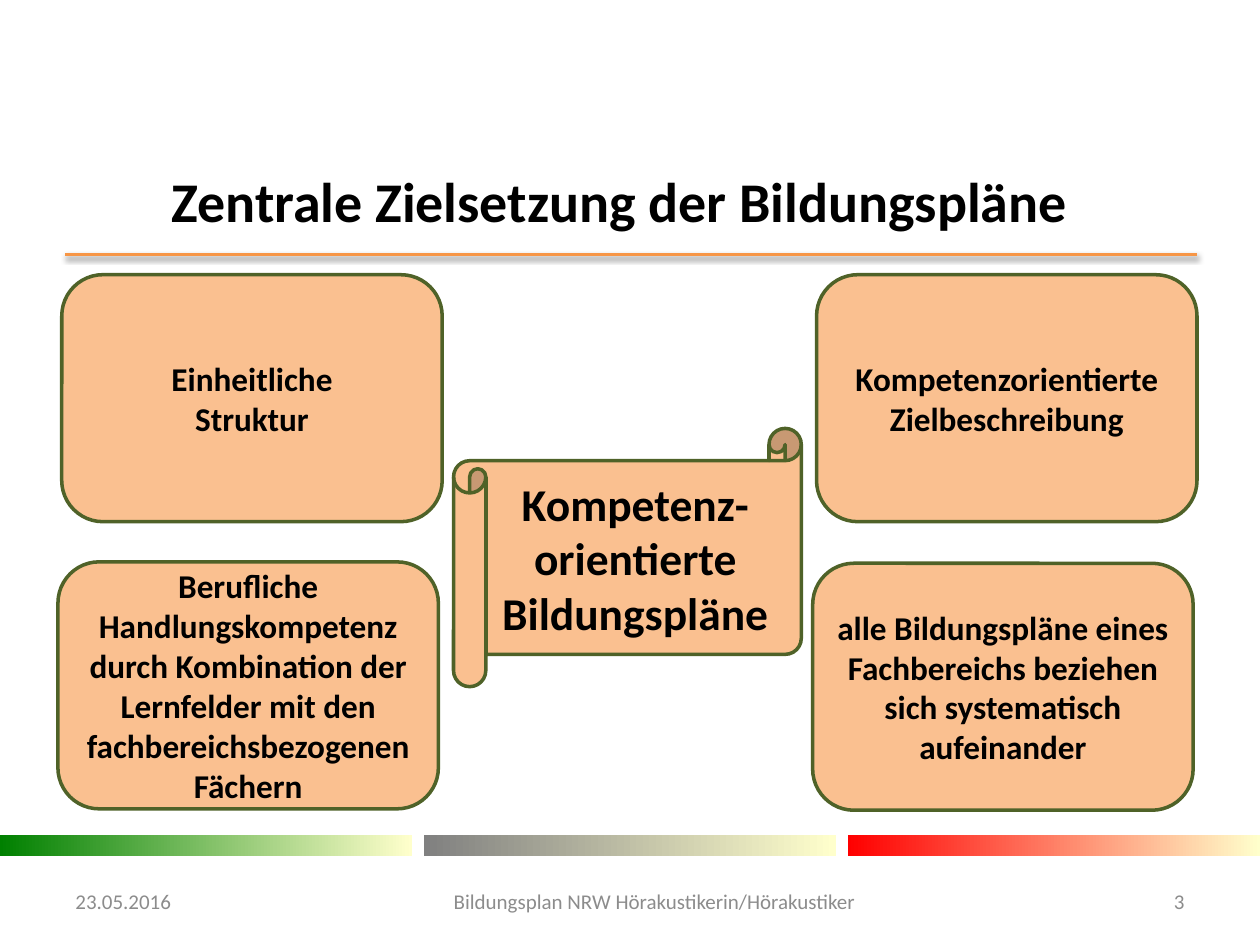
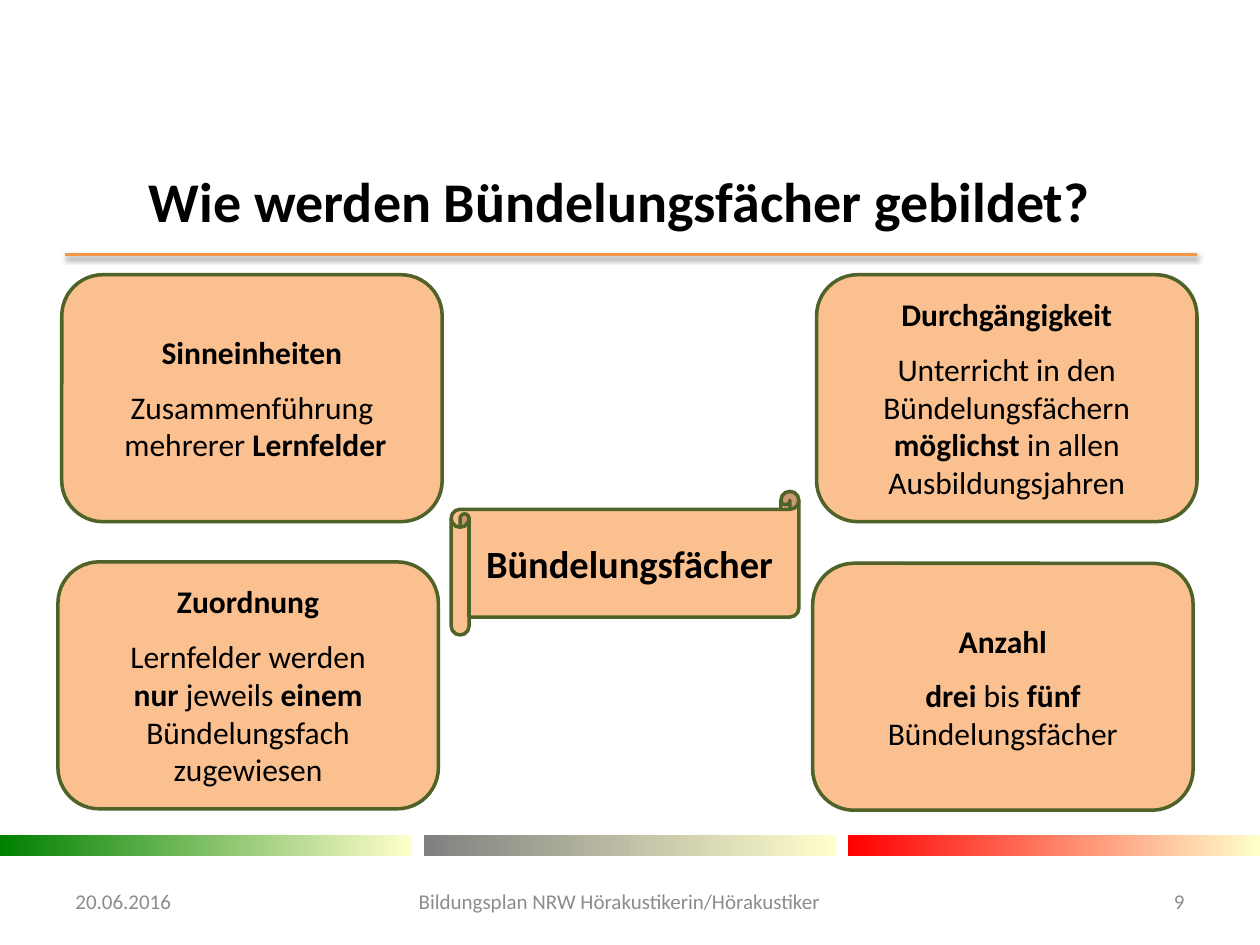
from lxml import etree
from pptx import Presentation
from pptx import util as u
from pptx.dml import color
from pptx.enum import shapes, text
from pptx.oxml import ns

Pt = u.Pt
MID = text.PP_ALIGN.CENTER
KIND = shapes.MSO_SHAPE
FONT = "Calibri"
INK, GREY, EDGE, PEACH, RULE, PALE = "000000", "8C8C8C", "4F6228", "FAC090", "F79646", "FFFFCC"
BANDS = ("008000", "808080", "FF0000")

GRID = (35.3, 157, 648.7, 306)
CARD = (217.4, 141.1)
FOOT = (36, 500.4, 648, 28.8)

SLIDES = [
    {
        "title": "Zentrale Zielsetzung der Bildungspläne",
        "hub": ("Kompetenz-orientierte Bildungspläne", (259.2, 244.8, 198.7, 147.6), 26),
        "size": 19,
        "gap": 0,
        "cards": [
            ["*Einheitliche*", "*Struktur*"],
            ["*Berufliche Handlungskompetenz durch Kombination der Lernfelder "
             "mit den fachbereichsbezogenen Fächern*"],
            ["*alle Bildungspläne eines Fachbereichs beziehen sich systematisch aufeinander*"],
            ["*Kompetenzorientierte Zielbeschreibung*"],
        ],
        "foot": ("23.05.2016", "3", 131, 414),
    },
    {
        "title": "Wie werden Bündelungsfächer gebildet?",
        "hub": ("Bündelungsfächer", (257.8, 280.8, 198.7, 82.1), 22),
        "size": 18,
        "gap": 9.6,
        "cards": [
            ["*Sinneinheiten*", "Zusammenführung", " mehrerer *Lernfelder*"],
            ["*Zuordnung*", "Lernfelder werden",
             "*nur *jeweils *einem *Bündelungsfach", "zugewiesen"],
            ["*Anzahl*", "*drei *bis* fünf *Bündelungsfächer"],
            ["*Durchgängigkeit*", "Unterricht in den Bündelungsfächern *möglichst* "
             "in allen Ausbildungsjahren"],
        ],
        "foot": ("20.06.2016", "9", 80, 475.9),
    },
]


def rgb(code):
    return color.RGBColor.from_string(code)


def put(item, **form):
    for name, value in form.items():
        setattr(item, name, value)


def place(box):
    return [Pt(part) for part in box]


def write(shape, lines, size, ink=INK, align=MID, gap=0, side=7.2):
    frame = shape.text_frame
    put(frame, word_wrap=True, vertical_anchor=text.MSO_ANCHOR.MIDDLE,
        margin_left=Pt(side), margin_right=Pt(side))
    for row, line in enumerate(lines):
        para = frame.add_paragraph() if row else frame.paragraphs[0]
        para.alignment = align
        if row == 1:
            para.space_before = Pt(gap)
        for turn, part in enumerate(line.split("*")):
            if part:
                run = para.add_run()
                run.text = part
                put(run.font, name=FONT, size=Pt(size), bold=turn % 2 == 1)
                run.font.color.rgb = rgb(ink)


def label(slide, box, line, size, **form):
    write(slide.shapes.add_textbox(*place(box)), [line], size, **form)


def panel(slide, kind, box, lines, size, **form):
    shape = slide.shapes.add_shape(kind, *place(box))
    shape.shadow.inherit = False
    shape.fill.solid()
    shape.fill.fore_color.rgb = rgb(PEACH)
    shape.line.color.rgb = rgb(EDGE)
    shape.line.width = Pt(2)
    write(shape, lines, size, **form)


def header(slide, box, title):
    left, top, width, high = box
    base = top + high
    rule = slide.shapes.add_connector(
        shapes.MSO_CONNECTOR.STRAIGHT,
        *place((left - 10.8, base, left + width + 23.8, base)))
    rule.line.color.rgb = rgb(RULE)
    rule.line.width = Pt(2)
    rule._element.spPr.append(etree.fromstring(
        f'<a:effectLst {ns.nsdecls("a")}>'
        f'<a:outerShdw blurRad="{Pt(3.1)}" dist="{Pt(1.6)}" dir="5400000" rotWithShape="0">'
        '<a:srgbClr val="000000"><a:alpha val="38000"/></a:srgbClr>'
        '</a:outerShdw></a:effectLst>'))
    label(slide, box, f"*{title}*", 32)


def bands(slide, box):
    left, top, width, high = box
    span = 235.4
    step = (width - span) / (len(BANDS) - 1)
    for col, tone in enumerate(BANDS):
        bar = slide.shapes.add_shape(
            KIND.RECTANGLE, *place((left + col * step, top, span, high)))
        bar.shadow.inherit = False
        bar.line.fill.background()
        bar.fill.gradient()
        bar.fill.gradient_angle = 0
        for stop, code in zip(bar.fill.gradient_stops, (tone, PALE)):
            stop.color.rgb = rgb(code)


def cards(slide, box, items, size, gap):
    left, top, width, high = box
    wide, tall = CARD
    right, low = left + width - wide, top + high - tall
    spots = ((left, top), (left - 2.2, low - 0.8), (right - 2.2, low), (right, top))
    for spot, lines in zip(spots, items):
        panel(slide, KIND.ROUNDED_RECTANGLE, (*spot, *CARD), lines, size, gap=gap, side=5)


def footer(slide, box, date, page, start, span):
    left, top, width, high = box
    name = "Bildungsplan NRW Hörakustikerin/Hörakustiker"
    ends = text.PP_ALIGN
    parts = (
        (left, 168, date, ends.LEFT),
        (left + start, span, name, MID),
        (left + width - 168, 168, page, ends.RIGHT),
    )
    for x, wide, line, align in parts:
        label(slide, (x, top, wide, high), line, 12, ink=GREY, align=align)


def build(deck, data):
    slide = deck.slides.add_slide(deck.slide_layouts[6])
    bands(slide, (0, 477.4, 720, 11.5))
    header(slide, (48.2, 82.8, 612, 62.6), data["title"])
    line, box, size = data["hub"]
    panel(slide, KIND.HORIZONTAL_SCROLL, box, [f"*{line}*"], size)
    cards(slide, GRID, data["cards"], data["size"], data["gap"])
    footer(slide, FOOT, *data["foot"])


def main():
    deck = Presentation()
    put(deck, slide_width=Pt(720), slide_height=Pt(540))
    for data in SLIDES:
        build(deck, data)
    deck.save("out.pptx")


if __name__ == "__main__":
    main()
